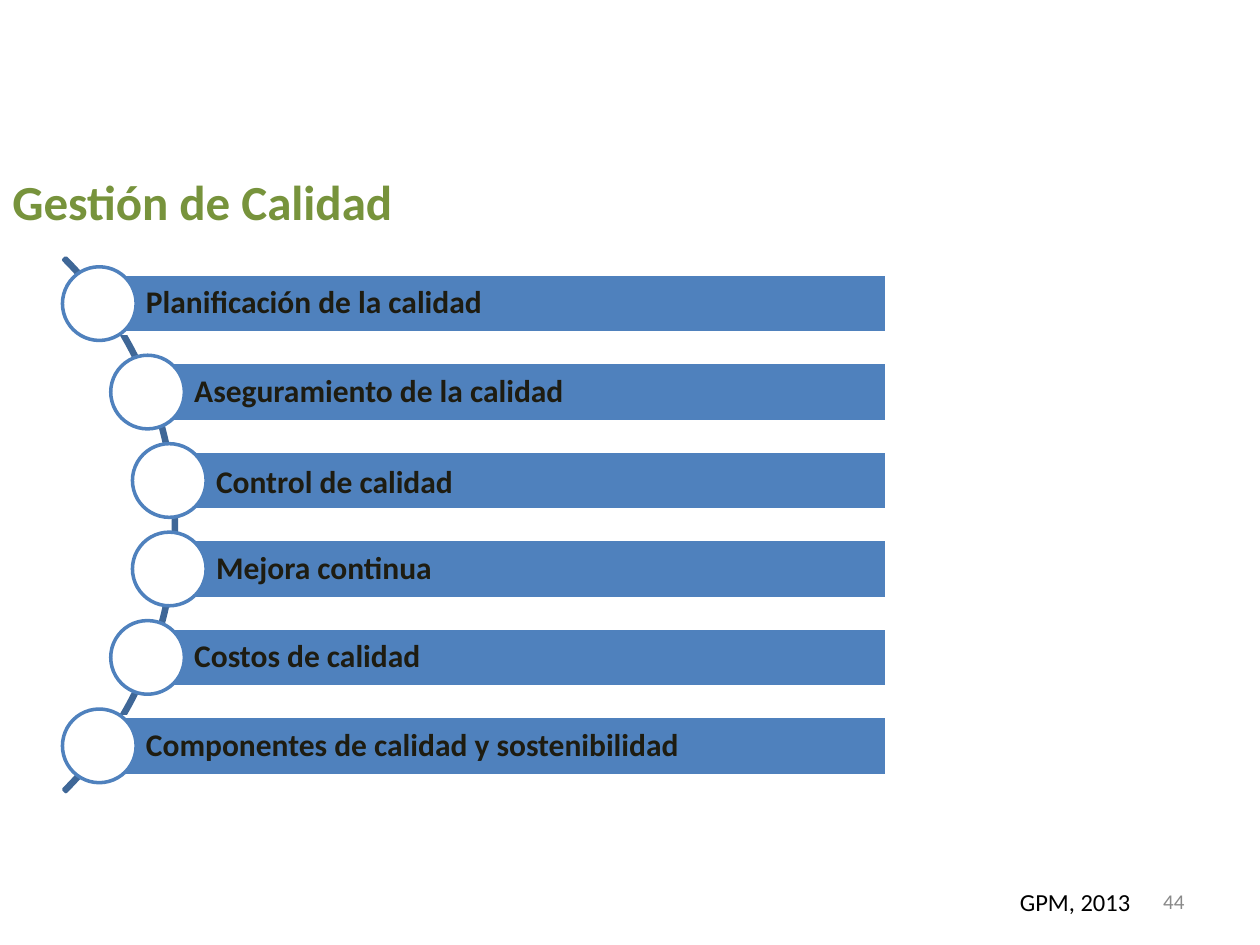
from dataclasses import dataclass
from math import sqrt

from pptx import Presentation
from pptx.dml.color import RGBColor
from pptx.enum.shapes import MSO_SHAPE
from pptx.enum.text import MSO_ANCHOR, PP_ALIGN
from pptx.util import Pt

RECT, OVAL, ARC = MSO_SHAPE.RECTANGLE, MSO_SHAPE.OVAL, MSO_SHAPE.BLOCK_ARC
TOP, MIDDLE = MSO_ANCHOR.TOP, MSO_ANCHOR.MIDDLE
LEFT, RIGHT = PP_ALIGN.LEFT, PP_ALIGN.RIGHT

COLORS = {
    "title": "77933C",
    "bar": "4F81BD",
    "arc": "3F6797",
    "white": "FFFFFF",
    "label": "1E1C11",
    "source": "000000",
    "number": "898989",
}
FONT = "Calibri"
ARC_X, ARC_Y, ARC_R = -114.85, 299.85, 215.65
NODE_R = 213.1
PITCH = 50.54
BAR_H, BAR_RIGHT = 33.7, 507
DOT = 42.1


@dataclass
class Step:
    label: str
    spacing: float = 0.9


STEPS = [
    Step("Planificación de la calidad"),
    Step("Aseguramiento de la calidad"),
    Step("Control de calidad", 1.0),
    Step("Mejora continua"),
    Step("Costos de calidad"),
    Step("Componentes de calidad y sostenibilidad"),
]


def rgb(name: str) -> RGBColor:
    return RGBColor.from_string(COLORS[name])


def write(sp, text: str, *, size: float, color: str, bold: bool = False,
          align=LEFT, anchor=MIDDLE, inset: float = 7.2,
          spacing: float = 1.0) -> None:
    tf = sp.text_frame
    tf.word_wrap = True
    tf.vertical_anchor = anchor
    tf.margin_left, tf.margin_right = Pt(inset), Pt(3.6)
    tf.margin_top = tf.margin_bottom = Pt(3.6)
    p = tf.paragraphs[0]
    p.alignment = align
    p.line_spacing = spacing
    r = p.add_run()
    r.text = text
    r.font.name = FONT
    r.font.size = Pt(size)
    r.font.bold = bold
    r.font.color.rgb = rgb(color)


def add_text(s, text: str, x: float, y: float, w: float, h: float, **fmt) -> None:
    write(s.shapes.add_textbox(Pt(x), Pt(y), Pt(w), Pt(h)), text, **fmt)


def add_shape(s, kind, x: float, y: float, w: float, h: float,
              line: str, fill: str = ""):
    sp = s.shapes.add_shape(kind, Pt(x), Pt(y), Pt(w), Pt(h))
    sp.shadow.inherit = False
    if fill:
        sp.fill.solid()
        sp.fill.fore_color.rgb = rgb(fill)
    else:
        sp.fill.background()
    sp.line.color.rgb = rgb(line)
    sp.line.width = Pt(2)
    return sp


def add_arc(s) -> None:
    sp = add_shape(s, ARC, ARC_X - ARC_R, ARC_Y - ARC_R, 2 * ARC_R, 2 * ARC_R, "arc")
    for i, value in enumerate((189, 27, 0.004)):
        sp.adjustments[i] = value


def add_step(s, step: Step, index: int) -> None:
    dy = (index - (len(STEPS) - 1) / 2) * PITCH
    x, y = ARC_X + sqrt(NODE_R ** 2 - dy ** 2), ARC_Y + dy
    bar = add_shape(s, RECT, x, y - BAR_H / 2, BAR_RIGHT - x, BAR_H, "white", "bar")
    write(bar, step.label, size=18, color="label", bold=True,
          inset=26.7, spacing=step.spacing)
    add_shape(s, OVAL, x - DOT / 2, y - DOT / 2, DOT, DOT, "bar", "white")


def main() -> None:
    prs = Presentation()
    prs.slide_width, prs.slide_height = Pt(720), Pt(540)
    s = prs.slides.add_slide(prs.slide_layouts[6])
    add_text(s, "Gestión de Calidad", 0, 94.3, 720, 42,
             size=28, color="title", bold=True, anchor=TOP)
    add_text(s, "GPM, 2013", 575.7, 503, 80, 24, size=14, color="source")
    add_text(s, "44", 632, 500.4, 48.4, 28.8, size=12, color="number", align=RIGHT)
    add_arc(s)
    for i, step in enumerate(STEPS):
        add_step(s, step, i)
    prs.save("out.pptx")


if __name__ == "__main__":
    main()
